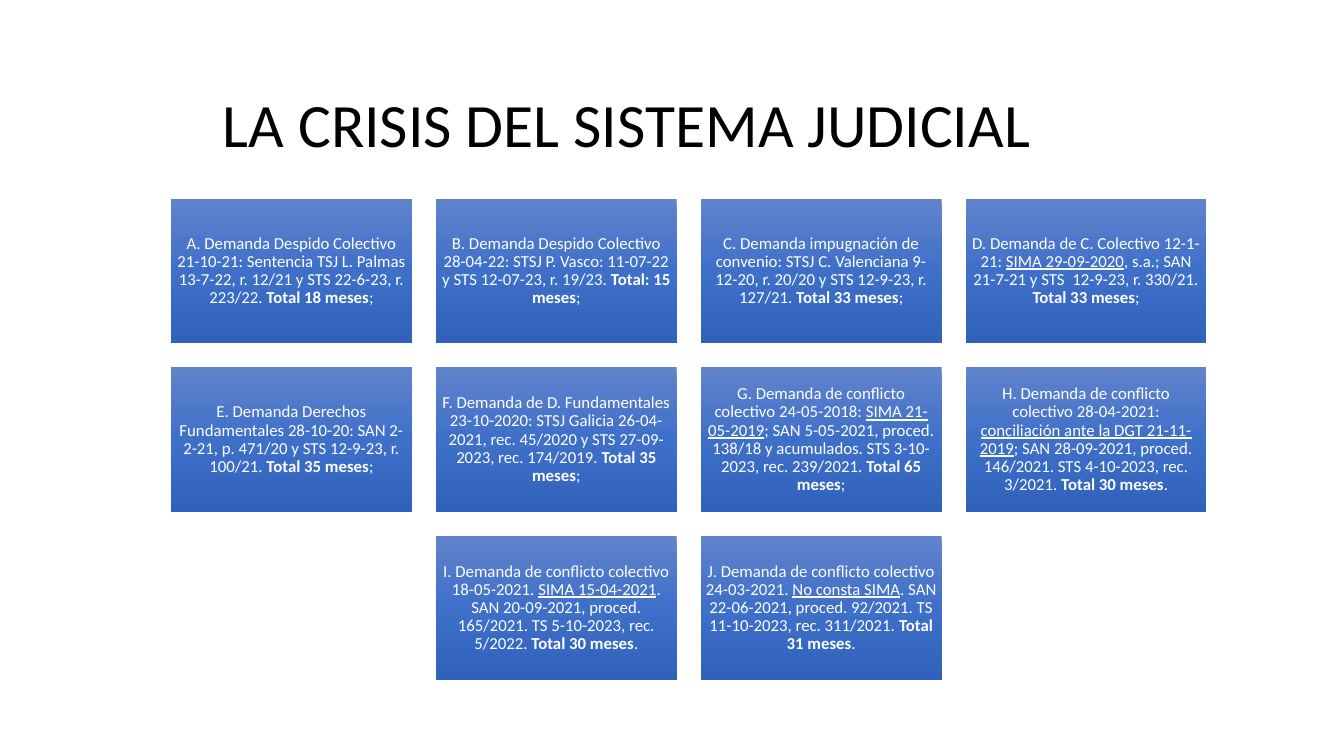
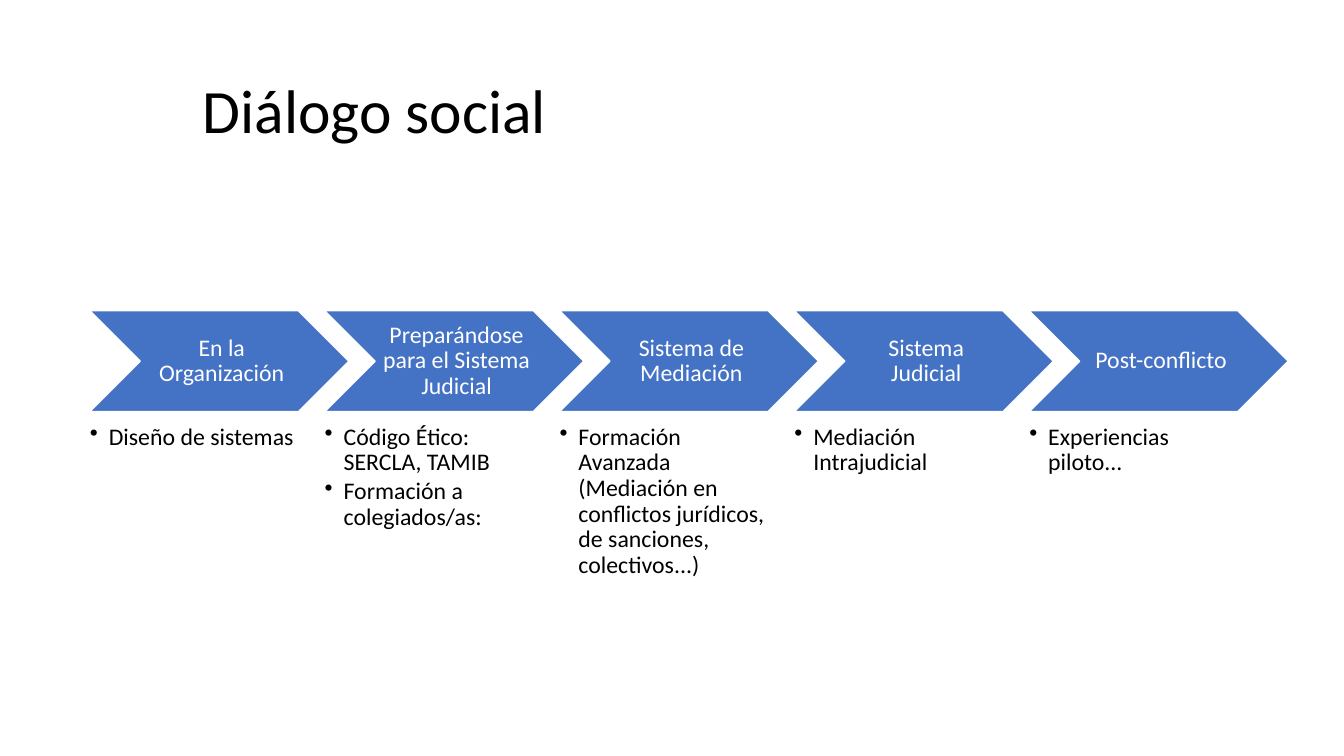
import copy

import pptx
import pptx.dml.color
import pptx.enum.shapes
import pptx.enum.text
import pptx.oxml.ns
import pptx.oxml.xmlchemy
import pptx.util
from lxml import etree

Pt = pptx.util.Pt
RGBColor = pptx.dml.color.RGBColor
MSO_SHAPE = pptx.enum.shapes.MSO_SHAPE
MSO_ANCHOR = pptx.enum.text.MSO_ANCHOR
PP_ALIGN = pptx.enum.text.PP_ALIGN
qn = pptx.oxml.ns.qn

BLACK = RGBColor(0x00, 0x00, 0x00)
WHITE = RGBColor(0xFF, 0xFF, 0xFF)
STAGE_BLUE = RGBColor(0x44, 0x72, 0xC4)
CARD_TOP = RGBColor(0x61, 0x83, 0xCB)
CARD_MIDDLE = RGBColor(0x3E, 0x70, 0xCA)
CARD_BOTTOM = RGBColor(0x30, 0x62, 0xBB)

FONT = "Calibri"
TITLE_SIZE, CARD_SIZE, STAGE_SIZE = 44, 12, 17
LINE_SPACING = 0.9

COLUMNS = 4
CARD_LEFT, CARD_TOP_EDGE = 122.2, 142
CARD_WIDTH, CARD_HEIGHT, CARD_GAP = 172, 103.2, 17.2

STAGE_LEFT, STAGE_TOP, STAGE_PITCH = 64.2, 222, 167.75
STAGE_WIDTH, STAGE_HEIGHT = 185, 72
ACTIONS_TOP, ACTIONS_WIDTH, ACTIONS_HEIGHT = 303.2, 147.6, 112
BULLET_INDENT = 13.5

# (intro, underlined step, continuation, bold duration, closing mark)
CASES = [
    ("A. Demanda Despido Colectivo 21-10-21: Sentencia TSJ L. Palmas 13-7-22, r. 12/21 y STS 22-6-23, r. 223/22. ",
     "", "", "Total 18 meses", ";"),
    ("B. Demanda Despido Colectivo 28-04-22: STSJ P. Vasco: 11-07-22 y STS 12-07-23, r. 19/23. ",
     "", "", "Total: 15 meses", ";"),
    ("C. Demanda impugnación de convenio: STSJ C. Valenciana 9-12-20, r. 20/20 y STS 12-9-23, r. 127/21. ",
     "", "", "Total 33 meses", ";"),
    ("D. Demanda de C. Colectivo 12-1-21: ", "SIMA 29-09-2020",
     ", s.a.; SAN 21-7-21 y STS  12-9-23, r. 330/21. ", "Total 33 meses", ";"),
    ("E. Demanda Derechos Fundamentales 28-10-20: SAN 2-2-21, p. 471/20 y STS 12-9-23, r. 100/21. ",
     "", "", "Total 35 meses", ";"),
    ("F. Demanda de D. Fundamentales 23-10-2020: STSJ Galicia 26-04-2021, rec. 45/2020 y STS 27-09-2023, rec. 174/2019. ",
     "", "", "Total 35 meses", ";"),
    ("G. Demanda de conflicto colectivo 24-05-2018: ", "SIMA 21-05-2019",
     "; SAN 5-05-2021, proced. 138/18 y acumulados. STS 3-10-2023, rec. 239/2021. ", "Total 65 meses", ";"),
    ("H. Demanda de conflicto colectivo 28-04-2021: ", "conciliación ante la DGT 21-11-2019",
     "; SAN 28-09-2021, proced. 146/2021. STS 4-10-2023, rec. 3/2021. ", "Total 30 meses", "."),
    ("I. Demanda de conflicto colectivo 18-05-2021. ", "SIMA 15-04-2021",
     ". SAN 20-09-2021, proced. 165/2021. TS 5-10-2023, rec. 5/2022. ", "Total 30 meses", "."),
    ("J. Demanda de conflicto colectivo 24-03-2021. ", "No consta SIMA",
     ". SAN 22-06-2021, proced. 92/2021. TS 11-10-2023, rec. 311/2021. ", "Total 31 meses", "."),
]

STAGES = [
    ("En la Organización", ["Diseño de sistemas"]),
    ("Preparándose para el Sistema Judicial", ["Código Ético: SERCLA, TAMIB", "Formación a colegiados/as:"]),
    ("Sistema de Mediación",
     ["Formación Avanzada (Mediación en conflictos jurídicos, de sanciones, colectivos...)"]),
    ("Sistema Judicial", ["Mediación Intrajudicial"]),
    ("Post-conflicto", ["Experiencias piloto..."]),
]


def add_run(paragraph, text, size, color, bold=False, underline=False):
    run = paragraph.add_run()
    run.text = text
    run.font.name = FONT
    run.font.size = Pt(size)
    run.font.color.rgb = color
    run.font.bold = bold
    run.font.underline = underline


def format_paragraph(paragraph, alignment):
    paragraph.alignment = alignment
    paragraph.line_spacing = LINE_SPACING
    return paragraph


def format_frame(frame, anchor, left, top, right, bottom):
    frame.word_wrap = True
    frame.vertical_anchor = anchor
    frame.margin_left, frame.margin_top = Pt(left), Pt(top)
    frame.margin_right, frame.margin_bottom = Pt(right), Pt(bottom)


def add_titled_slide(deck, text, box, anchor):
    slide = deck.slides.add_slide(deck.slide_layouts[5])
    title = slide.shapes.title
    title.left, title.top, title.width, title.height = map(Pt, box)
    frame = title.text_frame
    frame.auto_size = pptx.enum.text.MSO_AUTO_SIZE.NONE
    format_frame(frame, anchor, 7.2, 3.6, 7.2, 3.6)
    add_run(format_paragraph(frame.paragraphs[0], PP_ALIGN.LEFT), text, TITLE_SIZE, BLACK)
    return slide


def fill_card(card):
    card.fill.gradient()
    card.fill.gradient_angle = 270
    first, last = card.fill.gradient_stops
    first.position, last.position = 0, 1
    first.color.rgb = CARD_MIDDLE
    first_stop = card._element.spPr.find(".//" + qn("a:gs"))
    middle_stop = copy.deepcopy(first_stop)
    middle_stop.set("pos", "50000")
    first_stop.addnext(middle_stop)
    first.color.rgb = CARD_TOP
    last.color.rgb = CARD_BOTTOM


def add_case_card(slide, left, top, case):
    card = slide.shapes.add_shape(MSO_SHAPE.RECTANGLE, Pt(left), Pt(top), Pt(CARD_WIDTH), Pt(CARD_HEIGHT))
    card.shadow.inherit = False
    card.line.fill.background()
    fill_card(card)
    format_frame(card.text_frame, MSO_ANCHOR.MIDDLE, 3.6, 3.6, 3.6, 3.6)
    paragraph = format_paragraph(card.text_frame.paragraphs[0], PP_ALIGN.CENTER)
    for part, text in enumerate(case):
        if text:
            add_run(paragraph, text, CARD_SIZE, WHITE, bold=part == 3, underline=part == 1)


def add_stage(slide, left, name):
    stage = slide.shapes.add_shape(MSO_SHAPE.CHEVRON, Pt(left), Pt(STAGE_TOP), Pt(STAGE_WIDTH), Pt(STAGE_HEIGHT))
    stage.shadow.inherit = False
    stage.fill.solid()
    stage.fill.fore_color.rgb = STAGE_BLUE
    stage.line.color.rgb = WHITE
    stage.line.width = Pt(1)
    format_frame(stage.text_frame, MSO_ANCHOR.MIDDLE, 5, 1.6, 1.6, 1.6)
    paragraph = format_paragraph(stage.text_frame.paragraphs[0], PP_ALIGN.CENTER)
    add_run(paragraph, name, STAGE_SIZE, WHITE)


def add_bullet(paragraph):
    properties = paragraph._p.get_or_add_pPr()
    properties.set("marL", str(Pt(BULLET_INDENT)))
    properties.set("indent", str(-Pt(BULLET_INDENT)))
    etree.SubElement(properties, qn("a:buChar")).set("char", "•")


def add_actions(slide, left, actions):
    box = slide.shapes.add_textbox(Pt(left), Pt(ACTIONS_TOP), Pt(ACTIONS_WIDTH), Pt(ACTIONS_HEIGHT))
    frame = box.text_frame
    format_frame(frame, MSO_ANCHOR.TOP, 0, 0, 0, 0)
    for index, action in enumerate(actions):
        paragraph = frame.add_paragraph() if index else frame.paragraphs[0]
        format_paragraph(paragraph, PP_ALIGN.LEFT)
        paragraph.level = 1
        paragraph.space_after = Pt(2.5)
        add_bullet(paragraph)
        add_run(paragraph, action, STAGE_SIZE, BLACK)


def build_crisis_slide(deck):
    slide = add_titled_slide(deck, "LA CRISIS DEL SISTEMA JUDICIAL", (152, 12.2, 627, 106), MSO_ANCHOR.BOTTOM)
    for row, start in enumerate(range(0, len(CASES), COLUMNS)):
        cases = CASES[start:start + COLUMNS]
        centring = (COLUMNS - len(cases)) / 2
        for column, case in enumerate(cases):
            left = CARD_LEFT + (column + centring) * (CARD_WIDTH + CARD_GAP)
            add_case_card(slide, left, CARD_TOP_EDGE + row * (CARD_HEIGHT + CARD_GAP), case)


def build_dialogue_slide(deck):
    slide = add_titled_slide(deck, "Diálogo social", (137.5, 28.8, 664.5, 104.4), MSO_ANCHOR.MIDDLE)
    for index, (name, actions) in enumerate(STAGES):
        left = STAGE_LEFT + index * STAGE_PITCH
        add_stage(slide, left, name)
        add_actions(slide, left, actions)


def main():
    deck = pptx.Presentation()
    deck.slide_width, deck.slide_height = Pt(960), Pt(540)
    build_crisis_slide(deck)
    build_dialogue_slide(deck)
    deck.save("out.pptx")


if __name__ == "__main__":
    main()
